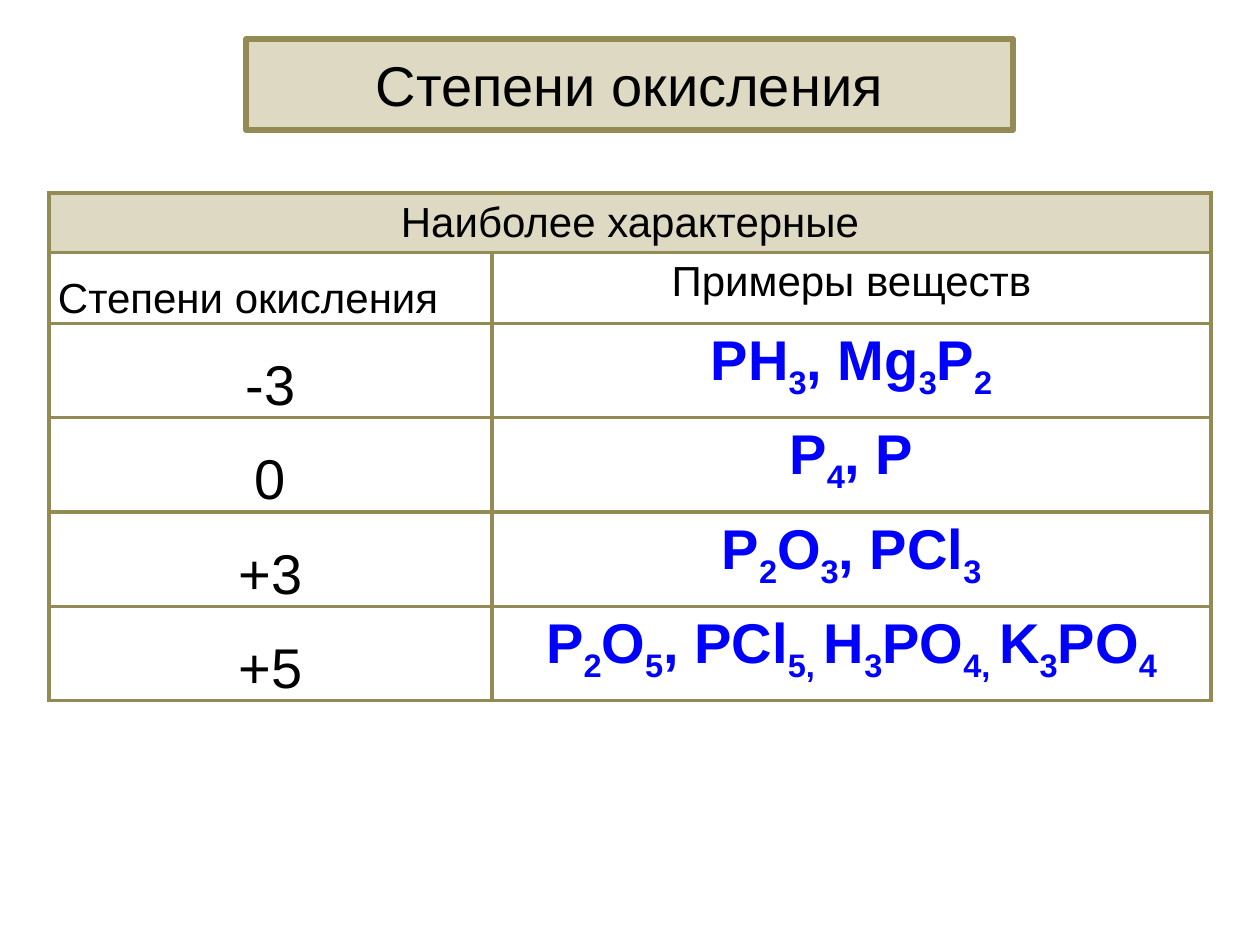
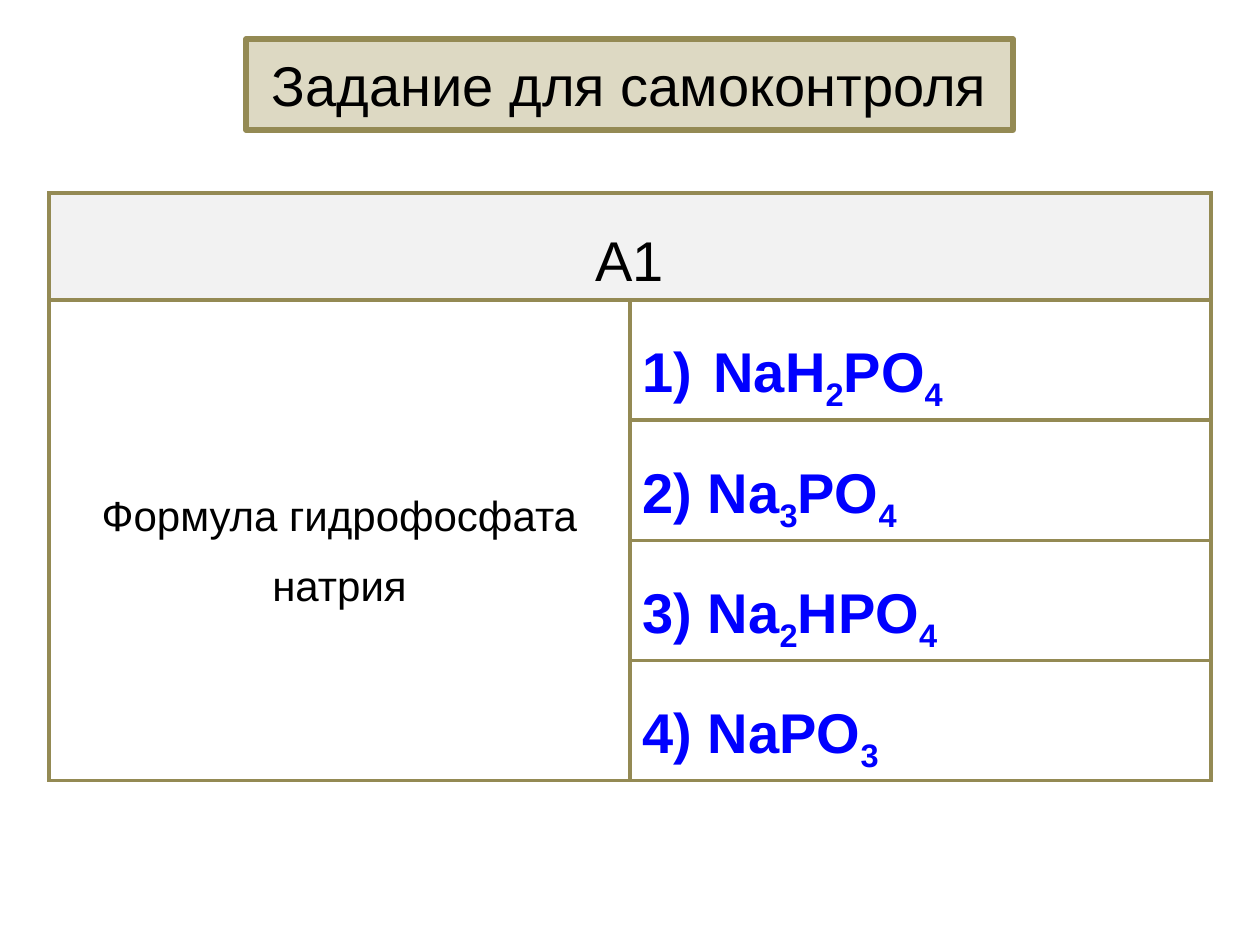
import pptx
import pptx.dml.color
import pptx.enum.shapes
import pptx.enum.text
import pptx.oxml.ns
import pptx.util
from dataclasses import dataclass
from lxml import etree

EMU_PER_PX = 914400 // 126
ALIGN = pptx.enum.text.PP_ALIGN
MIDDLE = pptx.enum.text.MSO_ANCHOR.MIDDLE


@dataclass(frozen=True)
class Theme:
    font: str = "Arial"
    text: str = "000000"
    formula: str = "0000FF"
    sand: str = "DDD9C3"
    olive: str = "948A54"
    grey: str = "F2F2F2"
    large: int = 32
    medium: int = 24
    title_line: float = 3
    border: float = 2.25
    loose: float = 1.5


THEME = Theme()
TABLE_LEFT, TABLE_TOP = 49, 193


def px(length):
    return pptx.util.Emu(length * EMU_PER_PX)


def rgb(color):
    return pptx.dml.color.RGBColor.from_string(color)


def add_xml(parent, tag, **attributes):
    return etree.SubElement(parent, pptx.oxml.ns.qn(tag), attributes)


def write(frame, text, size, align=ALIGN.CENTER, spacing=None, formula=False):
    """Fill the first paragraph; text between a pair of ~ becomes subscript."""
    para = frame.paragraphs[0]
    para.alignment = align
    if spacing:
        para.line_spacing = spacing
    for index, part in enumerate(text.split("~")):
        if not part:
            continue
        span = para.add_run()
        span.text = part
        span.font.name = THEME.font
        span.font.size = pptx.util.Pt(size)
        span.font.bold = formula
        span.font.color.rgb = rgb(THEME.formula if formula else THEME.text)
        if index % 2:
            span.font._element.set("baseline", "-25000")
    return para


def number_paragraph(para, indent):
    properties = para._p.get_or_add_pPr()
    properties.set("marL", str(px(indent)))
    properties.set("indent", str(-px(indent)))
    add_xml(properties, "a:buFont", typeface=THEME.font)
    add_xml(properties, "a:buAutoNum", type="arabicParenR")


def add_title(page, text):
    box = page.shapes.add_shape(pptx.enum.shapes.MSO_SHAPE.ROUNDED_RECTANGLE,
                                px(246), px(39), px(767), px(91))
    box.adjustments[0] = 0
    box.shadow.inherit = False
    box.fill.solid()
    box.fill.fore_color.rgb = rgb(THEME.sand)
    box.line.color.rgb = rgb(THEME.olive)
    box.line.width = pptx.util.Pt(THEME.title_line)
    box.text_frame.word_wrap = True
    box.text_frame.vertical_anchor = MIDDLE
    write(box.text_frame, text, THEME.large)


def draw_borders(cell):
    properties = cell._tc.get_or_add_tcPr()
    for side in "LRTB":
        line = add_xml(properties, f"a:ln{side}", w=str(pptx.util.Pt(THEME.border)))
        add_xml(add_xml(line, "a:solidFill"), "a:srgbClr", val=THEME.olive)


def add_grid(page, widths, heights, header_fill):
    """Add a bordered table whose first row is merged into one filled header."""
    table = page.shapes.add_table(len(heights), len(widths), px(TABLE_LEFT), px(TABLE_TOP),
                                  px(sum(widths)), px(sum(heights))).table
    table.first_row = table.horz_banding = False
    for column, width in zip(table.columns, widths):
        column.width = px(width)
    for row, height in zip(table.rows, heights):
        row.height = px(height)
    for cell in table.iter_cells():
        draw_borders(cell)
        cell.fill.background()
    header = table.cell(0, 0)
    header.merge(table.cell(0, len(widths) - 1))
    header.fill.solid()
    header.fill.fore_color.rgb = rgb(header_fill)
    return table


def write_label(cell, text, size, align=ALIGN.CENTER):
    """Write a loosely spaced label in a cell with tight margins."""
    cell.margin_left = cell.margin_right = px(9)
    cell.margin_top = cell.margin_bottom = 0
    write(cell.text_frame, text, size, align, THEME.loose)


def build_oxidation_page(page):
    add_title(page, "Степени окисления")
    examples = [("-3", "PH~3~, Mg~3~P~2~"),
                ("0", "P~4~, P"),
                ("+3", "P~2~O~3~, PCl~3~"),
                ("+5", "P~2~O~5~, PCl~5, ~H~3~PO~4, ~K~3~PO~4~")]
    table = add_grid(page, [443, 719], [59, 71] + [94] * len(examples), THEME.sand)
    write(table.cell(0, 0).text_frame, "Наиболее характерные", THEME.medium)
    write_label(table.cell(1, 0), "Степени окисления", THEME.medium, ALIGN.LEFT)
    write(table.cell(1, 1).text_frame, "Примеры веществ", THEME.medium)
    for row, (state, formulas) in enumerate(examples, start=2):
        write_label(table.cell(row, 0), state, THEME.large)
        write(table.cell(row, 1).text_frame, formulas, THEME.large, formula=True)


def build_task_page(page):
    add_title(page, "Задание для самоконтроля")
    answers = ["NaH~2~PO~4~", "2) Na~3~PO~4~", "3) Na~2~HPO~4~", "4) NaPO~3~"]
    table = add_grid(page, [581, 581], [107] + [120] * len(answers), THEME.grey)
    write(table.cell(0, 0).text_frame, "А1", THEME.large, spacing=THEME.loose)
    question = table.cell(1, 0)
    question.merge(table.cell(len(answers), 0))
    question.vertical_anchor = MIDDLE
    write_label(question, "Формула гидрофосфата натрия", THEME.medium)
    paras = [write(table.cell(row, 1).text_frame, answer, THEME.large, ALIGN.LEFT,
                   THEME.loose, formula=True)
             for row, answer in enumerate(answers, start=1)]
    number_paragraph(paras[0], 71)


def main():
    deck = pptx.Presentation()
    deck.slide_width, deck.slide_height = px(1260), px(945)
    for build in (build_oxidation_page, build_task_page):
        build(deck.slides.add_slide(deck.slide_layouts[6]))
    deck.save("out.pptx")


if __name__ == "__main__":
    main()
